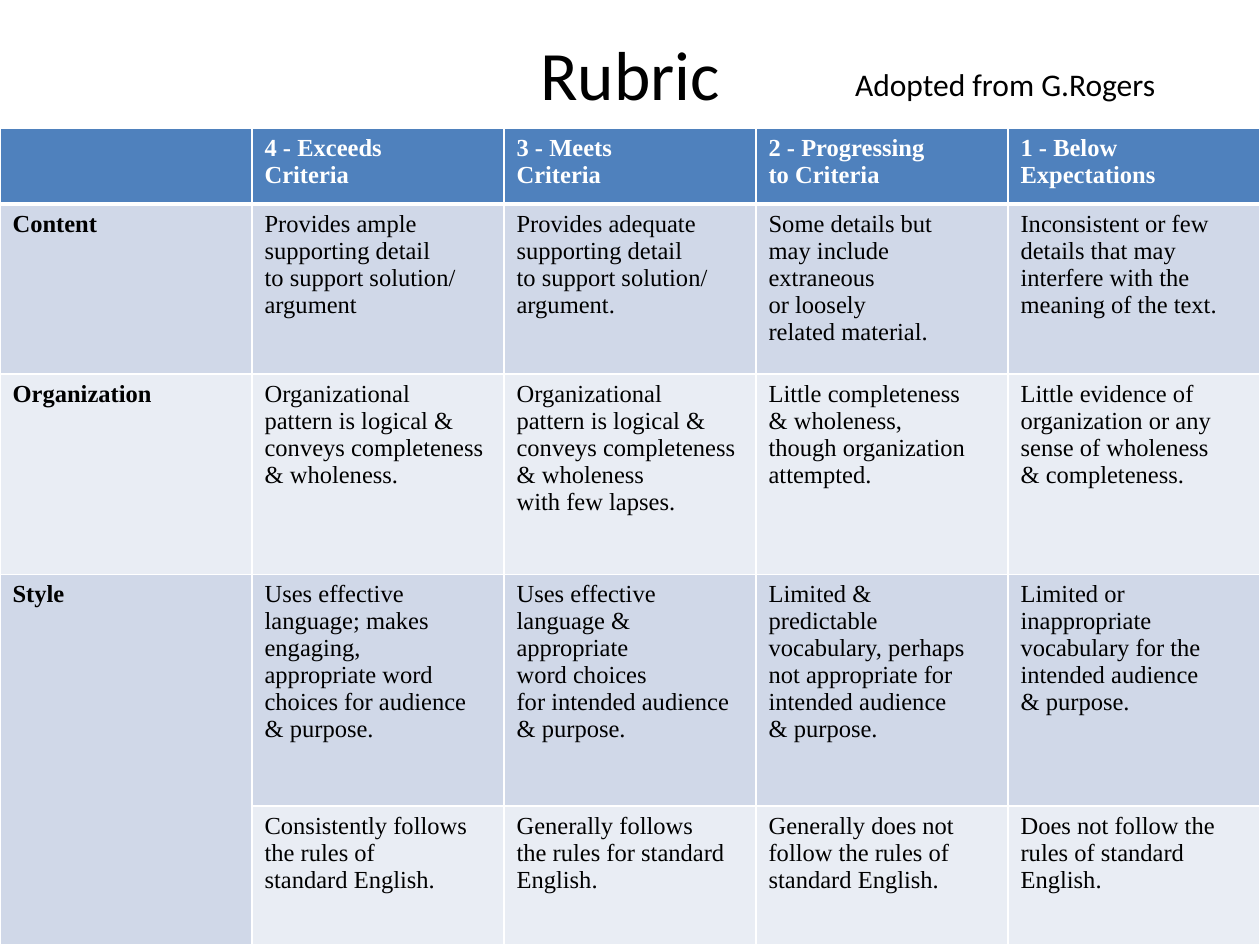
import pptx
import pptx.dml.color
import pptx.enum.text
import pptx.oxml
import pptx.oxml.ns
import pptx.util
from pptx.util import Cm

HEADER = [
    "",
    "4 - Exceeds\nCriteria",
    "3 - Meets\nCriteria",
    "2 - Progressing\nto Criteria",
    "1 - Below\nExpectations",
]
CRITERIA = [
    [
        "Content",
        "Provides ample\nsupporting detail\nto support solution/\nargument",
        "Provides adequate\nsupporting detail\nto support solution/\nargument.",
        "Some details but\nmay include extraneous\nor loosely\nrelated material.",
        "Inconsistent or few\ndetails that may\ninterfere with the\nmeaning of the text.",
    ],
    [
        "Organization",
        "Organizational\npattern is logical &\nconveys completeness\n& wholeness.",
        "Organizational\npattern is logical &\nconveys completeness\n& wholeness\nwith few lapses.",
        "Little completeness\n& wholeness,\nthough organization\nattempted.",
        "Little evidence of\norganization or any\nsense of wholeness\n& completeness.",
    ],
    [
        "Style",
        "Uses effective\nlanguage; makes\nengaging,\nappropriate word\nchoices for audience\n& purpose.",
        "Uses effective\nlanguage &\nappropriate\nword choices\nfor intended audience\n& purpose.",
        "Limited &\npredictable\nvocabulary, perhaps\nnot appropriate for\nintended audience\n& purpose.",
        "Limited or\ninappropriate\nvocabulary for the\nintended audience\n& purpose.",
    ],
    [
        "",
        "Consistently follows\nthe rules of\nstandard English.",
        "Generally follows\nthe rules for standard\nEnglish.",
        "Generally does not\nfollow the rules of\nstandard English.",
        "Does not follow the\nrules of standard\nEnglish.",
    ],
]
ROW_HEIGHTS = [1.52, 3.43, 4.04, 4.67, 2.8]
COLUMN_WIDTH = 5.08
TABLE_TOP = 2.59
HEADER_FILL = "4F81BD"
BAND_FILLS = ["D0D8E8", "E9EDF4"]
WHITE, BLACK = "FFFFFF", "000000"
ALIGN = pptx.enum.text.PP_ALIGN
ANCHOR = pptx.enum.text.MSO_ANCHOR


def color(value):
    return pptx.dml.color.RGBColor.from_string(value)


def write(frame, text, size, font, ink=BLACK, bold=False, align=ALIGN.LEFT):
    """Put each line of the text in a paragraph of its own."""
    frame.text = text
    for para in frame.paragraphs:
        para.alignment = align
        for span in para.runs:
            span.font.size = pptx.util.Pt(size)
            span.font.name = font
            span.font.bold = bold
            span.font.color.rgb = color(ink)


def add_label(page, place, text, size, wrap, anchor, align=ALIGN.LEFT):
    box = page.shapes.add_textbox(*(Cm(length) for length in place))
    box.text_frame.word_wrap = wrap
    box.text_frame.vertical_anchor = anchor
    write(box.text_frame, text, size, "Calibri", align=align)


def set_borders(cell, **widths):
    """Draw white cell borders; widths in points are keyed L, R, T, B."""
    properties = cell._tc.get_or_add_tcPr()
    for side, width in widths.items():
        properties.append(pptx.oxml.parse_xml(
            f'<a:ln{side} {pptx.oxml.ns.nsdecls("a")} w="{pptx.util.Pt(width)}">'
            f'<a:solidFill><a:srgbClr val="{WHITE}"/></a:solidFill></a:ln{side}>'
        ))


def add_rubric(page):
    rows = [HEADER] + CRITERIA
    table = page.shapes.add_table(
        len(rows), len(HEADER), Cm(0), Cm(TABLE_TOP),
        Cm(COLUMN_WIDTH * len(HEADER)), Cm(sum(ROW_HEIGHTS)),
    ).table
    table.first_row = table.horz_banding = False
    for column in table.columns:
        column.width = Cm(COLUMN_WIDTH)
    for r, (texts, height) in enumerate(zip(rows, ROW_HEIGHTS)):
        table.rows[r].height = Cm(height)
        is_header = r == 0
        fill = HEADER_FILL if is_header else BAND_FILLS[(r - 1) % 2]
        for c, text in enumerate(texts):
            cell = table.cell(r, c)
            set_borders(cell, L=1, R=1, T=3 if r == 1 else 1, B=3 if is_header else 1)
            cell.fill.solid()
            cell.fill.fore_color.rgb = color(fill)
            write(cell.text_frame, text, 14, "Times New Roman",
                  ink=WHITE if is_header else BLACK, bold=is_header or c == 0)
    table.cell(3, 0).merge(table.cell(4, 0))


def main():
    deck = pptx.Presentation()
    deck.slide_width, deck.slide_height = Cm(25.4), Cm(19.05)
    page = deck.slides.add_slide(deck.slide_layouts[6])
    add_label(page, (1.27, 0.76, 22.86, 1.42), "Rubric", 39.6,
              wrap=True, anchor=ANCHOR.MIDDLE, align=ALIGN.CENTER)
    add_rubric(page)
    add_label(page, (16.99, 1.19, 6.63, 1.02), "Adopted from G.Rogers", 18,
              wrap=False, anchor=ANCHOR.TOP)
    deck.save("out.pptx")


if __name__ == "__main__":
    main()
